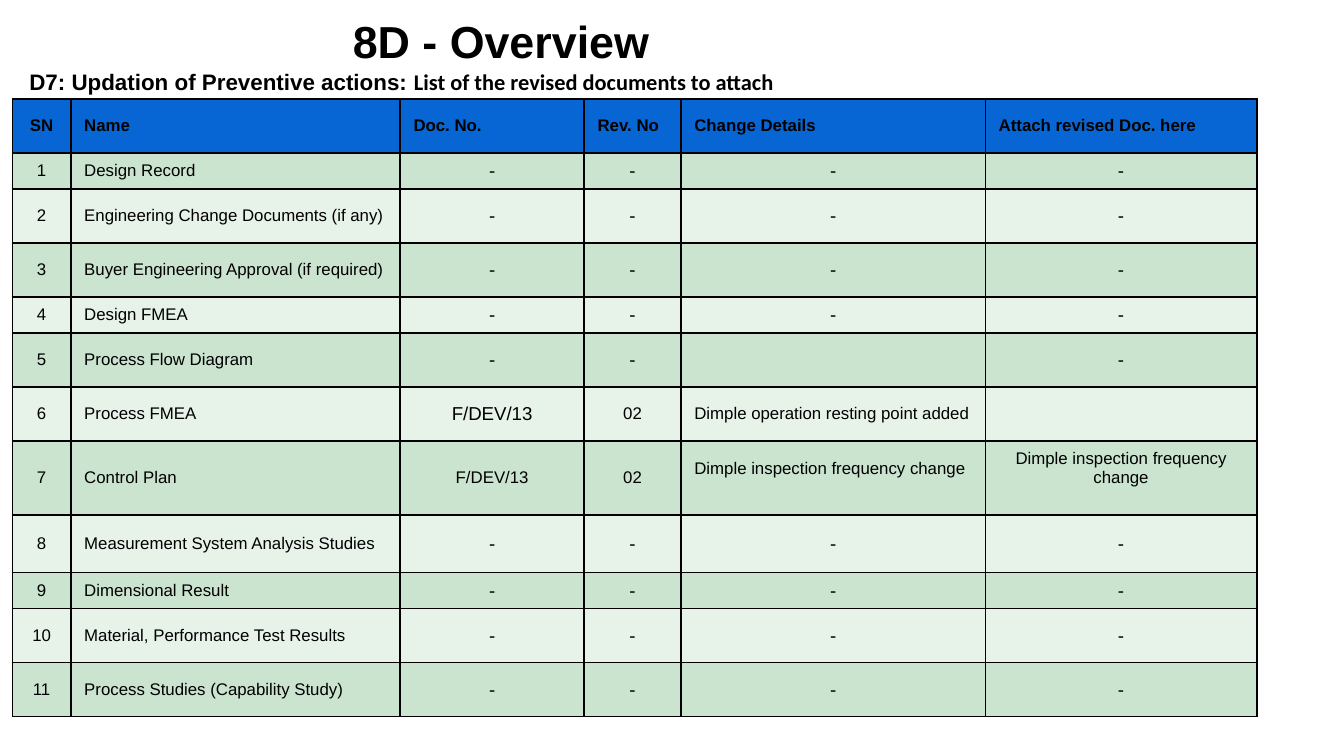
from lxml import etree
from pptx import Presentation
from pptx.dml.color import RGBColor
from pptx.enum.text import MSO_ANCHOR, PP_ALIGN
from pptx.oxml.ns import qn
from pptx.util import Inches, Pt

LEFT, CENTER = PP_ALIGN.LEFT, PP_ALIGN.CENTER
TOP, MIDDLE = MSO_ANCHOR.TOP, MSO_ANCHOR.MIDDLE
WIDE = Inches(10)
HIGH = WIDE * 9 // 16
UNIT = WIDE // 100
BLACK, BLUE, GREEN, PALE = "000000", "0766D4", "CBE4D0", "E7F2E9"

COLS = [4.35, 24.5, 13.7, 7.2, 22.65, 20.2]
ROWS = [4.02, 2.68, 4.02, 4.02, 2.68, 4.02, 4.02, 5.5, 4.3, 2.68, 4.02, 4.02]
HEAD = ["SN", "Name", "Doc. No.", "Rev. No", "Change Details", "Attach revised Doc. here"]
NAMES = [
    "Design Record",
    "Engineering Change Documents (if any)",
    "Buyer Engineering Approval (if required)",
    "Design FMEA",
    "Process Flow Diagram",
    "Process FMEA",
    "Control Plan",
    "Measurement System Analysis Studies",
    "Dimensional Result",
    "Material, Performance Test Results",
    "Process Studies (Capability Study)",
]
CHANGE = "Dimple inspection frequency change"
FILLED = {
    5: ["-", "-", "", "-"],
    6: ["F/DEV/13", "02", "Dimple operation resting point added", ""],
    7: ["F/DEV/13", "02", CHANGE, CHANGE],
}


def color(code):
    return RGBColor.from_string(code)


def grid(count):
    return round(count * UNIT)


class Board:
    face = "Arial"

    def __init__(self, deck):
        self.slide = deck.slides.add_slide(deck.slide_layouts[6])

    def style(self, font, size, bold=False, face=None):
        font.name = face or self.face
        font.size = Pt(size)
        font.bold = bold
        font.color.rgb = color(BLACK)

    def text(self, x, y, w, h, parts, size, anchor=TOP, inset=1):
        box = self.slide.shapes.add_textbox(grid(x), grid(y), grid(w), grid(h))
        frame = box.text_frame
        frame.word_wrap = True
        frame.vertical_anchor = anchor
        frame.margin_left = grid(inset)
        para = frame.paragraphs[0]
        for words, face in parts:
            run = para.add_run()
            run.text = words
            self.style(run.font, size, True, face)

    def border(self, cell):
        props = cell._tc.get_or_add_tcPr()
        for side in ("a:lnL", "a:lnR", "a:lnT", "a:lnB"):
            line = etree.SubElement(props, qn(side), w=str(Pt(1)))
            fill = etree.SubElement(line, qn("a:solidFill"))
            etree.SubElement(fill, qn("a:srgbClr"), val=BLACK)

    def cell(self, cell, words, size, align, fill, bold):
        self.border(cell)
        cell.fill.solid()
        cell.fill.fore_color.rgb = color(fill)
        cell.vertical_anchor = MIDDLE
        cell.text = words
        para = cell.text_frame.paragraphs[0]
        para.alignment = align
        self.style(para.font, size, bold)

    def table(self, x, y, cols, rows, data):
        frame = self.slide.shapes.add_table(
            len(rows), len(cols), grid(x), grid(y), grid(sum(cols)), grid(sum(rows)))
        table = frame.table
        table.first_row = table.horz_banding = False
        for col, width in zip(table.columns, cols):
            col.width = grid(width)
        for r, (row, height) in enumerate(zip(table.rows, rows)):
            row.height = grid(height)
            fill = BLUE if r == 0 else GREEN if r % 2 else PALE
            for c, words in enumerate(data[r]):
                dash = words == "-"
                left = c == 1 or (r == 0 and c > 0) or (c == 4 and not dash)
                size = 10 if dash or (r, c) == (6, 2) else 9
                self.cell(table.cell(r, c), words, size, LEFT if left else CENTER, fill, r == 0)
        return table


def main():
    deck = Presentation()
    deck.slide_width, deck.slide_height = WIDE, HIGH
    board = Board(deck)
    board.text(1.2, 0, 95.7, 6.1, [("8D - Overview", "Arial")], 24, MIDDLE, 25.05)
    board.text(1.2, 4.6, 95.6, 3, [
        ("D7: Updation of Preventive actions: ", "Arial"),
        ("List of the revised documents to attach", "Calibri"),
    ], 12)
    data = [HEAD] + [[str(n), name] + FILLED.get(n, ["-"] * 4)
                     for n, name in enumerate(NAMES, 1)]
    table = board.table(0.92, 7.36, COLS, ROWS, data)
    for c in (4, 5):
        table.cell(7, c).margin_bottom = grid(1.9)
    deck.save("out.pptx")


if __name__ == "__main__":
    main()
